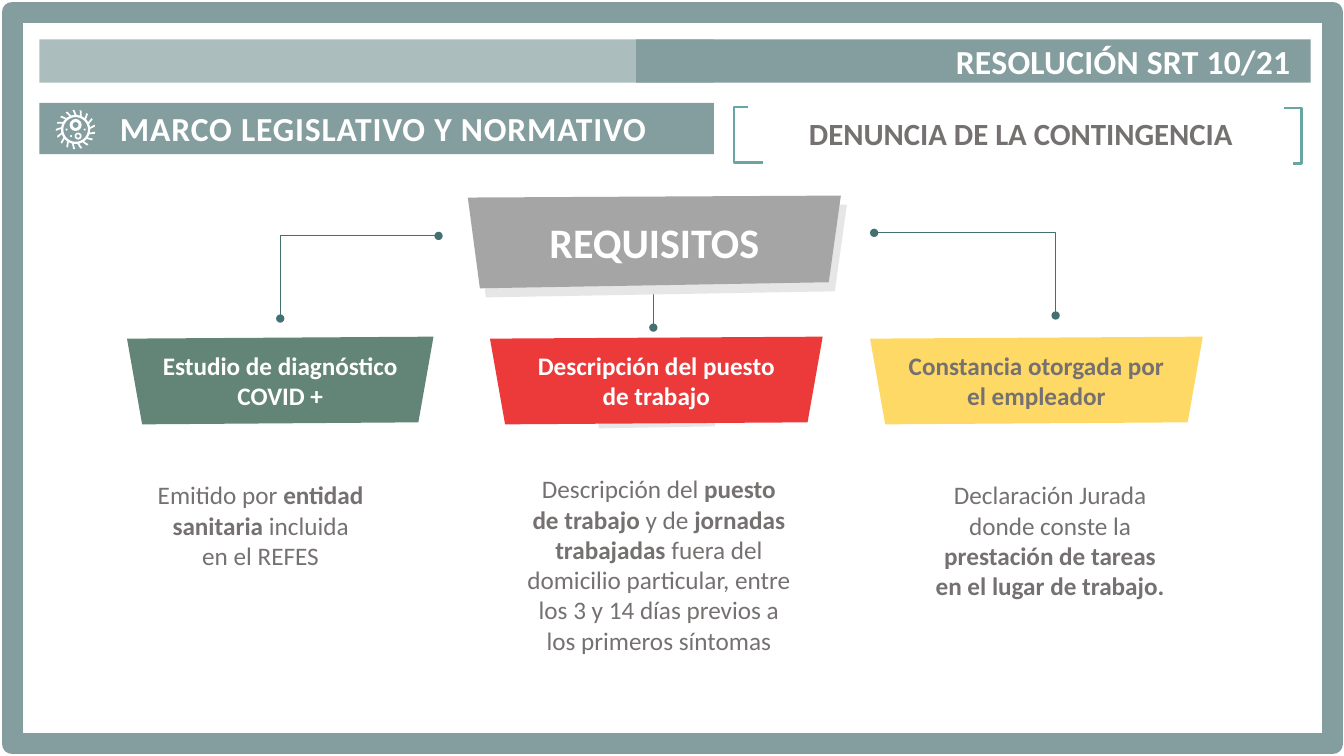
from dataclasses import dataclass
from math import cos, pi, sin

from lxml import etree
from pptx import Presentation
from pptx.dml.color import RGBColor
from pptx.enum.shapes import MSO_CONNECTOR, MSO_SHAPE
from pptx.enum.text import MSO_ANCHOR, MSO_AUTO_SIZE, PP_ALIGN
from pptx.oxml.ns import qn
from pptx.util import Inches, Pt

RECT, OVAL, DONUT = MSO_SHAPE.RECTANGLE, MSO_SHAPE.OVAL, MSO_SHAPE.DONUT
STRAIGHT = MSO_CONNECTOR.STRAIGHT
TOP, MIDDLE = MSO_ANCHOR.TOP, MSO_ANCHOR.MIDDLE
LEFT, CENTER, RIGHT = PP_ALIGN.LEFT, PP_ALIGN.CENTER, PP_ALIGN.RIGHT
NO_FIT = MSO_AUTO_SIZE.NONE
TITLE_ONLY = 5

Point = tuple[float, float]
Box = tuple[float, float, float, float]


@dataclass(frozen=True)
class Theme:
    font: str = "Calibri"
    white: str = "FFFFFF"
    teal: str = "849E9F"
    link: str = "437071"
    bracket: str = "6AA5A6"
    text: str = "767171"
    shade: str = "E6E6E6"
    grey: str = "A5A5A5"
    green: str = "638577"
    red: str = "EC3A3B"
    yellow: str = "FFD966"
    body_size: int = 18
    topic_size: int = 22
    header_size: int = 24
    root_size: int = 30


THEME = Theme()


@dataclass(frozen=True)
class Panel:
    left: float
    top: float
    width: float
    fill: str
    text: str = ""
    color: str = THEME.white
    size: int = THEME.body_size
    height: float = 0.87
    inset: float = 0.15
    rise: float = 0.02


@dataclass(frozen=True)
class Detail:
    box: Box
    text: str


PANELS = [
    Panel(1.26, 3.34, 3.04, THEME.green, "Estudio de diagnóstico\vCOVID +"),
    Panel(5.87, 3.38, 1.29, THEME.shade, inset=0.07),
    Panel(4.86, 3.34, 3.3, THEME.red, "Descripción del puesto\vde trabajo"),
    Panel(8.63, 3.34, 3.3, THEME.yellow,
          "Constancia otorgada por\vel empleador", THEME.text),
    Panel(4.7, 2.03, 3.7, THEME.shade, height=0.92, inset=0.12, rise=0.06),
    Panel(4.64, 1.94, 3.7, THEME.grey, "REQUISITOS", size=THEME.root_size,
          height=0.92, inset=0.12, rise=0.06),
]
DETAILS = [
    Detail((1.46, 4.71, 2.25, 1.01),
           "Emitido por **entidad\nsanitaria** incluida\nen el REFES"),
    Detail((4.92, 4.65, 3.23, 1.92),
           "Descripción del **puesto\nde trabajo** y de **jornadas\n"
           "trabajadas** fuera del\ndomicilio particular, entre\n"
           "los 3 y 14 días previos a\nlos primeros síntomas"),
    Detail((9.04, 4.71, 2.75, 1.31),
           "Declaración Jurada\ndonde conste la\n"
           "**prestación de tareas\nen el lugar de trabajo.**"),
]
LINKS = [
    [(2.78, 3.16), (2.78, 2.34), (4.35, 2.34)],
    [(10.47, 3.13), (10.47, 2.31), (8.67, 2.31)],
]
BRACKETS = [
    [(7.42, 1.06), (7.28, 1.06), (7.28, 1.61), (7.57, 1.61)],
    [(12.74, 1.07), (12.91, 1.07), (12.91, 1.62), (12.82, 1.62)],
]
VIRUS_CENTER = (0.75, 1.285)
VIRUS_RINGS = [(0.75, 1.24, 0.06), (0.775, 1.35, 0.035)]
VIRUS_DOTS = [(0.66, 1.285), (0.705, 1.35), (0.84, 1.285)]


def rgb(color: str) -> RGBColor:
    return RGBColor.from_string(color)


def paint(shape, fill: str = "", line: str = "", width: float = 0) -> None:
    shape.shadow.inherit = False
    if fill:
        shape.fill.solid()
        shape.fill.fore_color.rgb = rgb(fill)
    else:
        shape.fill.background()
    if line:
        shape.line.color.rgb = rgb(line)
        shape.line.width = Pt(width)
    else:
        shape.line.fill.background()


def style_run(run, size: int, color: str, bold: bool, spacing: int = 0) -> None:
    run.font.name = THEME.font
    run.font.size = Pt(size)
    run.font.bold = bold
    run.font.color.rgb = rgb(color)
    if spacing:
        run.font._element.set("spc", str(spacing))


def set_frame(frame, anchor, left: float = 0, right: float = 0) -> None:
    frame.word_wrap = True
    frame.auto_size = NO_FIT
    frame.vertical_anchor = anchor
    frame.margin_left, frame.margin_right = Inches(left), Inches(right)


def write(shape, text: str, size: int, color: str, align=CENTER,
          left: float = 0, right: float = 0, spacing: int = 0) -> None:
    frame = shape.text_frame
    set_frame(frame, MIDDLE, left, right)
    frame.margin_top = frame.margin_bottom = 0
    paragraph = frame.paragraphs[0]
    paragraph.text = text
    paragraph.alignment = align
    for run in paragraph.runs:
        style_run(run, size, color, True, spacing)


def place(shape, box: Box) -> None:
    shape.left, shape.top, shape.width, shape.height = map(Inches, box)


def add_preset(slide, preset, box: Box, fill: str = "", line: str = "",
               width: float = 0):
    shape = slide.shapes.add_shape(preset, *map(Inches, box))
    paint(shape, fill, line, width)
    return shape


def add_outline(slide, *contours: list[Point], close: bool = True):
    paths = [[(Inches(x), Inches(y)) for x, y in contour] for contour in contours]
    builder = slide.shapes.build_freeform(*paths[0][0], scale=1.0)
    builder.add_line_segments(paths[0][1:], close=close)
    for path in paths[1:]:
        builder.move_to(*path[0])
        builder.add_line_segments(path[1:], close=close)
    return builder.convert_to_shape()


def add_panel(slide, panel: Panel) -> None:
    right, bottom = panel.left + panel.width, panel.top + panel.height
    shape = add_outline(slide, [
        (right, panel.top), (panel.left, panel.top + 0.02),
        (panel.left + panel.inset, bottom),
        (right - panel.inset, bottom - panel.rise)])
    paint(shape, panel.fill)
    if panel.text:
        write(shape, panel.text, panel.size, panel.color)


def add_detail(slide, detail: Detail) -> None:
    frame = slide.shapes.add_textbox(*map(Inches, detail.box)).text_frame
    set_frame(frame, TOP)
    paragraph = frame.paragraphs[0]
    paragraph.alignment = CENTER
    for part_index, part in enumerate(detail.text.split("**")):
        for line_index, words in enumerate(part.split("\n")):
            if line_index:
                paragraph.add_line_break()
            if words:
                run = paragraph.add_run()
                run.text = words
                style_run(run, THEME.body_size, THEME.text, part_index % 2 == 1)


def add_dot_ends(link) -> None:
    line = link.line._get_or_add_ln()
    for end in ("a:headEnd", "a:tailEnd"):
        etree.SubElement(line, qn(end), type="oval")


def polar(radius: float, angle: float) -> Point:
    return (VIRUS_CENTER[0] + radius * sin(angle),
            VIRUS_CENTER[1] - radius * cos(angle))


def add_virus(slide, spikes: int = 17, lean: float = 0.11) -> None:
    step = 2 * pi / spikes
    rim = [polar(radius, spike * step + offset) for spike in range(spikes)
           for radius, offset in ((0.145, -0.06), (0.195, -0.05 - lean),
                                  (0.195, 0.05 - lean), (0.145, 0.06))]
    hole = [polar(0.122, -turn * pi / 20) for turn in range(40)]
    paint(add_outline(slide, rim, hole), THEME.white)
    for x, y, radius in VIRUS_RINGS:
        box = (x - radius, y - radius, 2 * radius, 2 * radius)
        add_preset(slide, DONUT, box, THEME.white).adjustments[0] = 0.25
    for x, y in VIRUS_DOTS:
        add_preset(slide, OVAL, (x - 0.01, y - 0.01, 0.02, 0.02), THEME.white)


def add_headers(slide) -> None:
    add_preset(slide, RECT, (0.12, 0.12, 13.1, 7.26), line=THEME.teal, width=15)
    band = add_preset(slide, RECT, (0.39, 0.39, 6.69, 0.43), THEME.teal)
    color = band.fill._xPr.find(qn("a:solidFill"))[0]
    etree.SubElement(color, qn("a:alpha"), val="67000")
    title = slide.shapes.title
    place(title, (6.31, 0.39, 6.69, 0.43))
    title.fill.solid()
    title.fill.fore_color.rgb = rgb(THEME.teal)
    write(title, "RESOLUCIÓN SRT 10/21", THEME.header_size, THEME.white,
          RIGHT, right=0.2, spacing=20)
    section = add_preset(slide, RECT, (0.39, 1.02, 6.69, 0.51), THEME.teal)
    write(section, "MARCO LEGISLATIVO Y NORMATIVO", THEME.header_size,
          THEME.white, LEFT, left=0.8, spacing=60)
    add_virus(slide)
    for bracket in BRACKETS:
        paint(add_outline(slide, bracket, close=False), line=THEME.bracket, width=1.75)
    topic = slide.shapes.add_textbox(*map(Inches, (7.54, 1.13, 5.17, 0.38)))
    write(topic, "DENUNCIA DE LA CONTINGENCIA", THEME.topic_size, THEME.text)


def add_requirements(slide) -> None:
    for points in LINKS:
        link = add_outline(slide, points, close=False)
        paint(link, line=THEME.link, width=0.75)
        add_dot_ends(link)
    stem = slide.shapes.add_connector(
        STRAIGHT, *map(Inches, (6.48, 2.87, 6.48, 3.25)))
    stem.line.color.rgb = rgb(THEME.link)
    stem.line.width = Pt(0.75)
    add_dot_ends(stem)
    etree.SubElement(stem._element.spPr, qn("a:effectLst"))
    for panel in PANELS:
        add_panel(slide, panel)
    for detail in DETAILS:
        add_detail(slide, detail)


def main() -> None:
    deck = Presentation()
    deck.slide_width, deck.slide_height = Inches(13.33), Inches(7.5)
    slide = deck.slides.add_slide(deck.slide_layouts[TITLE_ONLY])
    add_headers(slide)
    add_requirements(slide)
    deck.save("out.pptx")


if __name__ == "__main__":
    main()
